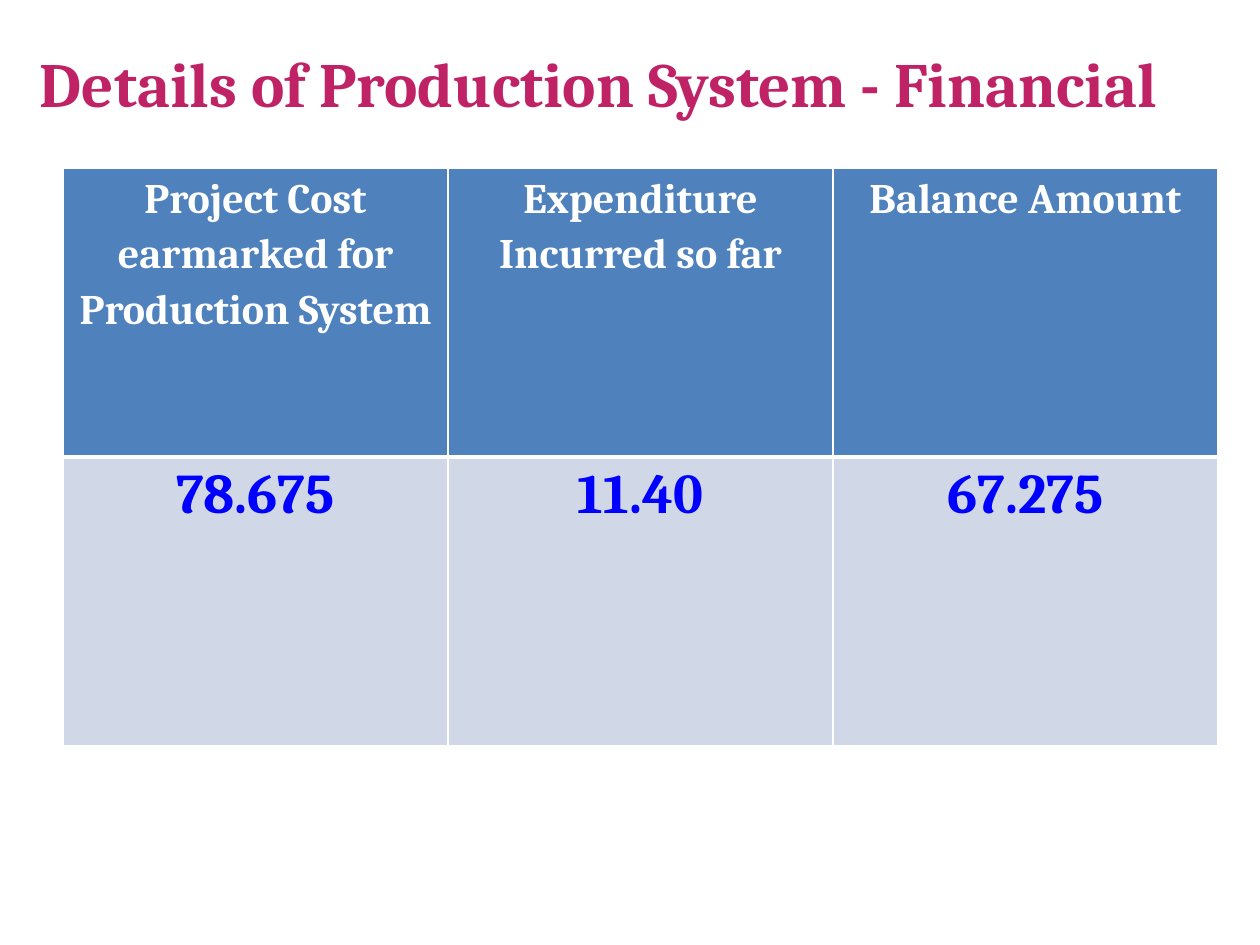
"""Build the financial details slide of the production system."""
from dataclasses import dataclass

from lxml import etree
from pptx import Presentation
from pptx.dml.color import RGBColor
from pptx.enum import text as t
from pptx.oxml import ns
from pptx.util import Cm, Pt

FONT = "Cambria"
WHITE = "FFFFFF"


@dataclass(frozen=True)
class RowStyle:
    fill: str
    color: str
    size: int
    spacing: float
    side_inset: float
    top_inset: float
    top_border: int
    bottom_border: int


@dataclass(frozen=True)
class TableRow:
    texts: tuple[str, ...]
    style: RowStyle


HEADER = RowStyle("4F81BD", WHITE, 24, 1.15, 0.18, 0, 1, 3)
AMOUNT = RowStyle("D0D8E8", "0000FF", 32, 1, 0.25, 0.13, 3, 1)

ROWS = (
    TableRow(
        (
            "Project Cost earmarked for Production System",
            "Expenditure Incurred so far",
            "Balance Amount",
        ),
        HEADER,
    ),
    TableRow(("78.675", "11.40", "67.275"), AMOUNT),
)


def rgb(value: str) -> RGBColor:
    return RGBColor.from_string(value)


def write_text(frame, content: str, *, size: int, color: str, spacing: float = 1) -> None:
    frame.word_wrap = True
    paragraph = frame.paragraphs[0]
    paragraph.alignment = t.PP_ALIGN.CENTER
    paragraph.line_spacing = spacing
    run = paragraph.add_run()
    run.text = content
    run.font.name = FONT
    run.font.size = Pt(size)
    run.font.bold = True
    run.font.color.rgb = rgb(color)


def add_border(cell, side: str, width: int) -> None:
    properties = cell._tc.get_or_add_tcPr()
    line = etree.SubElement(properties, ns.qn(f"a:ln{side}"), w=str(Pt(width)))
    fill = etree.SubElement(line, ns.qn("a:solidFill"))
    etree.SubElement(fill, ns.qn("a:srgbClr"), val=WHITE)


def format_cell(cell, content: str, style: RowStyle) -> None:
    cell.margin_left = cell.margin_right = Cm(style.side_inset)
    cell.margin_top = cell.margin_bottom = Cm(style.top_inset)
    widths = {"L": 1, "R": 1, "T": style.top_border, "B": style.bottom_border}
    for side, width in widths.items():
        add_border(cell, side, width)
    cell.fill.solid()
    cell.fill.fore_color.rgb = rgb(style.fill)
    write_text(
        cell.text_frame, content, size=style.size, color=style.color, spacing=style.spacing
    )


def add_title(slide, content: str) -> None:
    title = slide.shapes.title
    title.left, title.top = Cm(0), Cm(0.76)
    title.width, title.height = Cm(24.13), Cm(3.18)
    frame = title.text_frame
    frame.vertical_anchor = t.MSO_ANCHOR.MIDDLE
    frame.margin_bottom = Cm(1.52)
    write_text(frame, content, size=36, color="BF2366")


def add_cost_table(slide, rows: tuple[TableRow, ...]) -> None:
    shape = slide.shapes.add_table(
        len(rows), len(rows[0].texts), Cm(1.27), Cm(3.39), Cm(23.28), Cm(11.64)
    )
    for row_index, row in enumerate(rows):
        for column_index, content in enumerate(row.texts):
            format_cell(shape.table.cell(row_index, column_index), content, row.style)


def main() -> None:
    presentation = Presentation()
    presentation.slide_width, presentation.slide_height = Cm(25.4), Cm(19.05)
    slide = presentation.slides.add_slide(presentation.slide_layouts[5])
    add_title(slide, "Details of Production System - Financial")
    add_cost_table(slide, ROWS)
    presentation.save("out.pptx")


if __name__ == "__main__":
    main()
